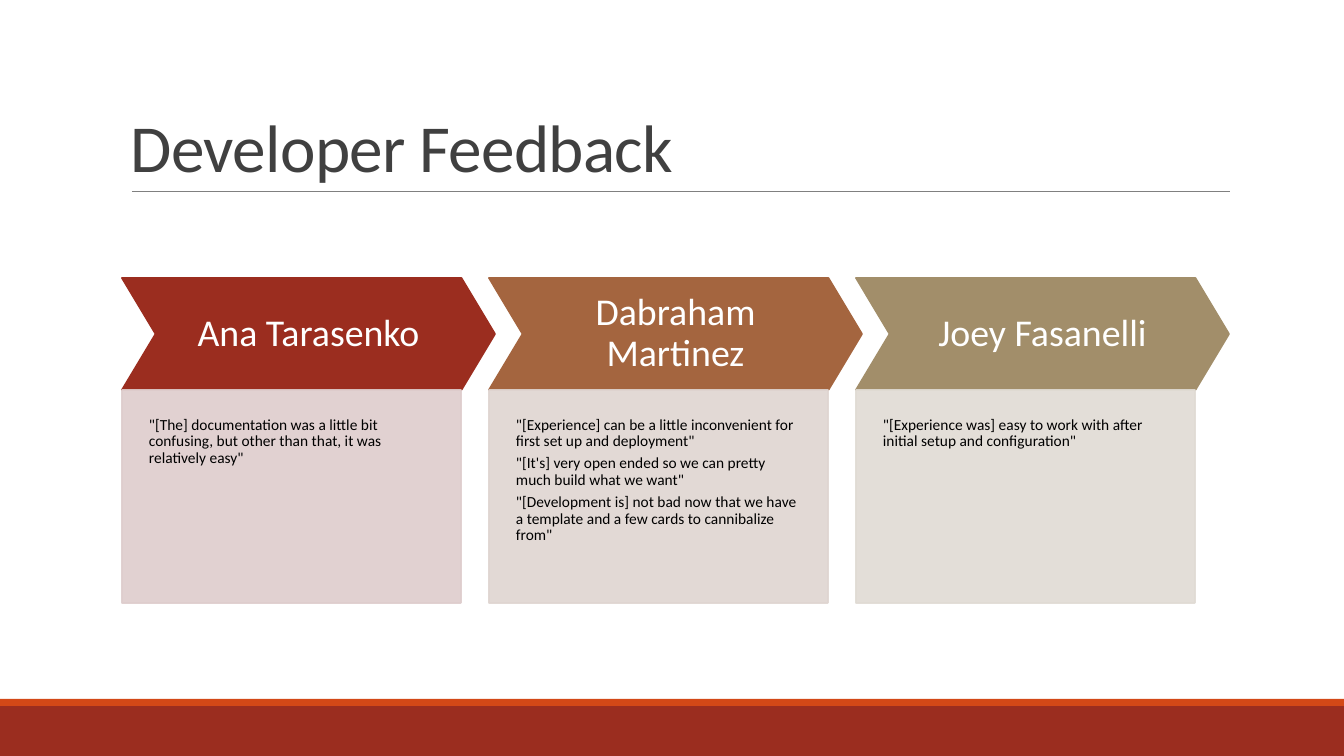
from dataclasses import dataclass

from lxml import etree
from pptx import Presentation
from pptx import util as u
from pptx.dml.color import RGBColor
from pptx.enum import shapes, text
from pptx.oxml.ns import qn

EMU_PER_PX = 914400 / 100.8
WIDTH, HEIGHT = 1344, 756


@dataclass(frozen=True)
class Theme:
    """Colours, font and type sizes of the slide."""
    font: str = "Calibri"
    title_size: int = 48
    name_size: int = 27
    quote_size: int = 11
    title: str = "404040"
    name: str = "FFFFFF"
    quote: str = "000000"
    rule: str = "808080"
    band: str = "9B2D1F"
    stripe: str = "D34817"


THEME = Theme()

DEVELOPERS = [
    ("Ana Tarasenko", "9B2D1F", "DECDCD", [
        '"[The] documentation was a little bit confusing, but other than that, it was relatively easy"',
    ]),
    ("Dabraham Martinez", "A4653F", "DFD5D1", [
        '"[Experience] can be a little inconvenient for first set up and deployment"',
        '"[It\'s] very open ended so we can pretty much build what we want"',
        '"[Development is] not bad now that we have a template and a few cards to cannibalize from"',
    ]),
    ("Joey Fasanelli", "A28E6A", "E0DBD4", [
        '"[Experience was] easy to work with after initial setup and configuration"',
    ]),
]


def px(length):
    """Turn pixels into EMU."""
    return u.Emu(round(length * EMU_PER_PX))


def write(shape, lines, size, color, align=text.PP_ALIGN.LEFT, anchor=text.MSO_ANCHOR.TOP,
          insets=(10, 5, 10, 5), spacing=0.9, after=0, tracking=None):
    """Fill a shape with formatted paragraphs."""
    frame = shape.text_frame
    frame.word_wrap = True
    frame.auto_size = text.MSO_AUTO_SIZE.NONE
    frame.vertical_anchor = anchor
    frame.margin_left, frame.margin_top, frame.margin_right, frame.margin_bottom = map(px, insets)
    for index, line in enumerate(lines):
        paragraph = frame.paragraphs[0] if index == 0 else frame.add_paragraph()
        paragraph.alignment = align
        paragraph.line_spacing = spacing
        paragraph.space_before = u.Pt(0)
        paragraph.space_after = u.Pt(after)
        run = paragraph.add_run()
        run.text = line
        run.font.name = THEME.font
        run.font.size = u.Pt(size)
        run.font.color.rgb = RGBColor.from_string(color)
        if tracking is not None:
            run.font._element.set("spc", str(tracking))


def add_block(slide, kind, box, color, outlined=False, opacity=100):
    """Add a flat preset shape in one colour."""
    shape = slide.shapes.add_shape(kind, *map(px, box))
    shape.shadow.inherit = False
    shape.fill.solid()
    shape.fill.fore_color.rgb = RGBColor.from_string(color)
    if outlined:
        shape.line.color.rgb = RGBColor.from_string(color)
        shape.line.width = u.Pt(1.25)
    else:
        shape.line.fill.background()
    if opacity < 100:
        for tint in shape._element.spPr.iter(qn("a:srgbClr")):
            etree.SubElement(tint, qn("a:alpha")).set("val", str(opacity * 1000))
    return shape


def add_footer(slide, left, top, width, height):
    """Draw the bottom band with its thin stripe on top."""
    stripe = 7
    rectangle = shapes.MSO_SHAPE.RECTANGLE
    add_block(slide, rectangle, (left, top + stripe, width, height - stripe), THEME.band)
    add_block(slide, rectangle, (left, top, width, stripe), THEME.stripe)


def add_title(slide, left, top, width, height):
    """Place the title and the rule beneath it."""
    title = slide.shapes.title
    title.left, title.top, title.width, title.height = map(px, (left, top, width, height))
    write(title, ["Developer Feedback"], THEME.title_size, THEME.title,
          anchor=text.MSO_ANCHOR.BOTTOM, spacing=0.85, tracking=-50)
    bottom = top + height
    rule = slide.shapes.add_connector(
        shapes.MSO_CONNECTOR.STRAIGHT, *map(px, (left + 11, bottom, left + width, bottom)))
    rule.line.color.rgb = RGBColor.from_string(THEME.rule)
    rule.line.width = u.Pt(0.5)
    etree.SubElement(rule._element.spPr, qn("a:effectLst"))


def add_developer(slide, left, top, width, height, developer):
    """Draw a name chevron above a panel of quotes."""
    name, color, tint, quotes = developer
    header, tip = 112, 34
    chevron = add_block(slide, shapes.MSO_SHAPE.CHEVRON, (left, top, width, header), color, True)
    chevron.adjustments[0] = 0.3
    write(chevron, [name], THEME.name_size, THEME.name, align=text.PP_ALIGN.CENTER,
          anchor=text.MSO_ANCHOR.MIDDLE, insets=(14, 14, 14, 14))
    panel = add_block(slide, shapes.MSO_SHAPE.RECTANGLE,
                      (left, top + header, width - tip, height - header), tint, True, opacity=90)
    write(panel, quotes, THEME.quote_size, THEME.quote, insets=(27, 27, 27, 53), after=3.85)


def add_feedback(slide, left, top, width, height):
    """Spread the developers evenly across the box."""
    column = 373
    pitch = (width - column) / (len(DEVELOPERS) - 1)
    for index, developer in enumerate(DEVELOPERS):
        add_developer(slide, left + index * pitch, top, column, height, developer)


def main():
    """Build and save the slide."""
    presentation = Presentation()
    presentation.slide_width, presentation.slide_height = px(WIDTH), px(HEIGHT)
    slide = presentation.slides.add_slide(presentation.slide_layouts.get_by_name("Title Only"))
    add_footer(slide, 0, 699, WIDTH, 57)
    add_title(slide, 121, 31, 1109, 160)
    add_feedback(slide, 122, 278, 1107, 325)
    presentation.save("out.pptx")


if __name__ == "__main__":
    main()
